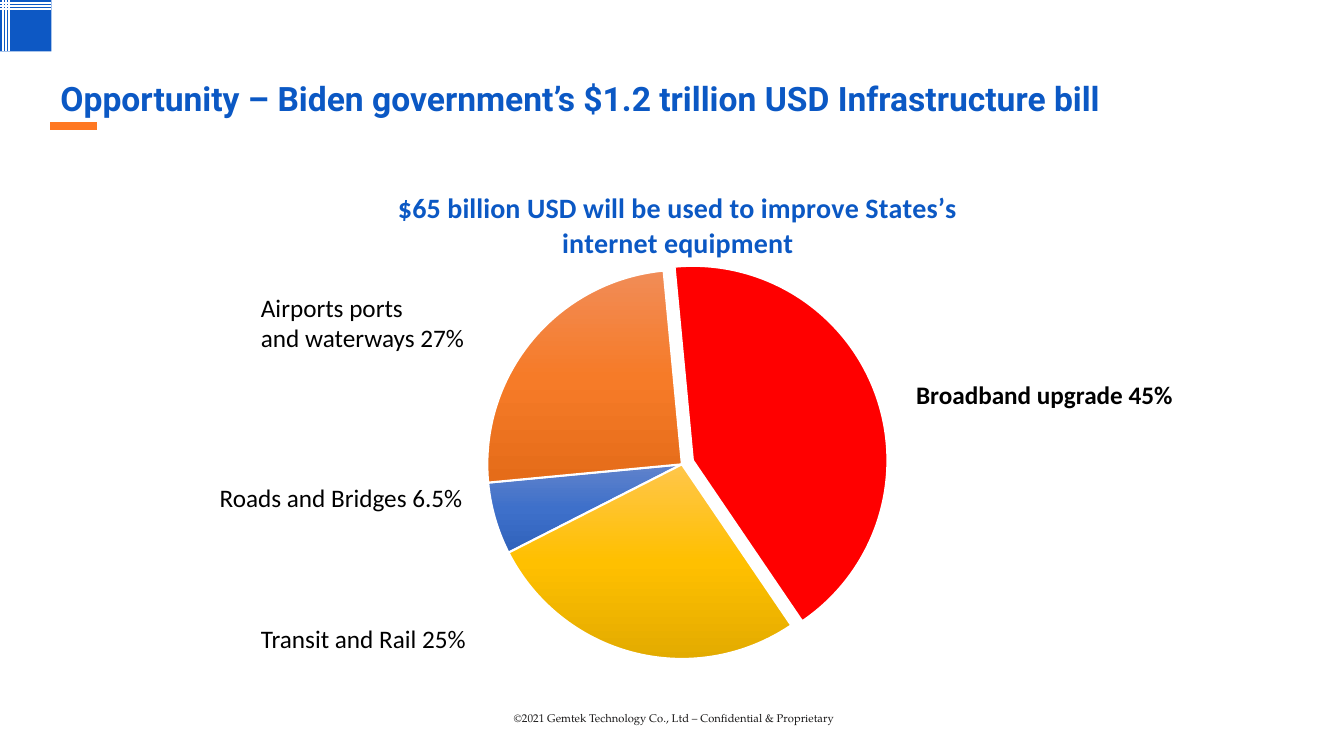
from copy import deepcopy
from dataclasses import dataclass

from lxml.etree import SubElement
from pptx import Presentation
from pptx.chart.data import CategoryChartData
from pptx.dml.color import RGBColor
from pptx.enum.chart import XL_CHART_TYPE
from pptx.enum.shapes import MSO_CONNECTOR, MSO_SHAPE
from pptx.enum.text import MSO_ANCHOR, PP_ALIGN
from pptx.oxml import parse_xml
from pptx.oxml.ns import nsdecls, qn
from pptx.util import Pt

TITLE = "Opportunity – Biden government’s $1.2 trillion USD Infrastructure bill"
HEADING = "$65 billion USD will be used to improve States’s internet equipment"
FOOTER = "©2021 Gemtek Technology Co., Ltd – Confidential & Proprietary"
# text, (left, top, width, height), bold
LABELS = [
    ("Roads and Bridges 6.5%", (149.8, 341.3, 193, 29), False),
    ("Transit and Rail 25%", (179.3, 441.4, 165.6, 29), False),
    ("Broadband upgrade 45%", (647.3, 267.1, 199.4, 29), True),
    ("Airports ports\nand waterways 27%", (179.3, 205.2, 164.2, 51), False),
]
# category, value, colours from top to bottom, explosion in percent
SLICES = [
    ("1", 6, ("6183CB", "3E70CA", "3062BB"), 0),
    ("2", 25, ("F18C57", "F67B28", "E56C19"), 0),
    ("3", 42, ("FF0000",), 6),
    ("4", 27, ("FFC64B", "FFC000", "E3AB00"), 0),
]
START = 243
CHART = (229, 115.9, 516.2, 365.8)
PLOT = {"x": 0.23, "y": 0.21, "w": 0.54, "h": 0.76}
HEAD = {"x": 0.1, "y": 0.04}
CORNER = 36.7
STRIPES = [(2.2, 1.5), (4.3, 1), (6.1, 0.5), (6.9, 0.25)]  # offset, width


@dataclass(frozen=True)
class Theme:
    blue: str = "0B58C4"
    square: str = "0D58C4"
    orange: str = "FF7822"
    white: str = "FFFFFF"
    black: str = "000000"
    ink: str = "181717"
    body: str = "Calibri"
    head: str = "Roboto"
    serif: str = "TeX Gyre Pagella"
    title: int = 24
    sub: int = 20
    label: int = 18
    base: int = 10
    small: int = 8


theme = Theme()


def rgb(code):
    return RGBColor.from_string(code)


def pts(nums):
    return [Pt(n) for n in nums]


def write(frame, text, size=theme.label, font=theme.body, color=theme.black,
          bold=False, align=PP_ALIGN.LEFT, space=None):
    for i, line in enumerate(text.split("\n")):
        para = frame.add_paragraph() if i else frame.paragraphs[0]
        para.alignment = align
        para.line_spacing = space
        run = para.add_run()
        run.text = line
        run.font.size, run.font.name = Pt(size), font
        run.font.bold, run.font.color.rgb = bold, rgb(color)


def label(slide, text, at, **style):
    frame = slide.shapes.add_textbox(*pts(at)).text_frame
    frame.word_wrap = False
    write(frame, text, **style)


def rule(slide, ends, color, width):
    line = slide.shapes.add_connector(MSO_CONNECTOR.STRAIGHT, *pts(ends))
    line.line.color.rgb, line.line.width = rgb(color), Pt(width)
    SubElement(line._element.spPr, qn("a:effectLst"))


def place(node, index, sizes, inner=False):
    """Give a chart part a manual layout, in fractions of the chart."""
    for old in node.findall(qn("c:layout")):
        node.remove(old)
    target = '<c:layoutTarget val="inner"/>' if inner else ""
    modes = "".join(f'<c:{k}Mode val="edge"/>' for k in "xy")
    nums = "".join(f'<c:{k} val="{v}"/>' for k, v in sizes.items())
    node.insert(index, parse_xml(
        f'<c:layout {nsdecls("c")}><c:manualLayout>{target}{modes}{nums}'
        "</c:manualLayout></c:layout>"))


def paint(fill, colors, node):
    if len(colors) == 1:
        fill.solid()
        fill.fore_color.rgb = rgb(colors[0])
        return
    fill.gradient()
    fill.gradient_angle = 270
    stops = node.find(f".//{qn('a:gsLst')}")
    while len(stops) < len(colors):
        stops.append(deepcopy(stops[0]))
    for i, (stop, code) in enumerate(zip(fill.gradient_stops, colors)):
        stop.color.rgb = rgb(code)
        stop.position = i / (len(colors) - 1)


def pie(slide):
    data = CategoryChartData()
    data.categories = [row[0] for row in SLICES]
    data.add_series("Series 1", [row[1] for row in SLICES])
    chart = slide.shapes.add_chart(XL_CHART_TYPE.PIE, *pts(CHART), data).chart
    chart.has_legend = False
    chart.font.size, chart.font.name = Pt(theme.base), theme.body
    chart.font.color.rgb = rgb(theme.black)
    chart.has_title = True
    write(chart.chart_title.text_frame, HEADING, size=theme.sub,
          color=theme.blue, bold=True, align=PP_ALIGN.CENTER)

    plot = chart.plots[0]
    plot.vary_by_categories = True
    root = chart._chartSpace
    for i, (_, _, colors, shift) in enumerate(SLICES):
        form = plot.series[0].points[i].format
        form.line.color.rgb, form.line.width = rgb(theme.white), Pt(1.5)
        node = root.xpath(f'.//c:dPt[c:idx/@val="{i}"]')[0]
        paint(form.fill, colors, node)
        if shift:
            node.find(qn("c:spPr")).addprevious(parse_xml(
                f'<c:explosion {nsdecls("c")} val="{shift}"/>'))

    ring = root.xpath(".//c:pieChart")[0]
    for old in ring.findall(qn("c:firstSliceAng")):
        ring.remove(old)
    SubElement(ring, qn("c:firstSliceAng")).set("val", str(START))
    place(root.xpath(".//c:plotArea")[0], 0, PLOT, inner=True)
    place(root.xpath("./c:chart/c:title")[0], 1, HEAD)


def corner(slide):
    tile = slide.shapes.add_shape(MSO_SHAPE.RECTANGLE, *pts((0, 0, CORNER, CORNER)))
    tile.shadow.inherit = False
    tile.fill.solid()
    tile.fill.fore_color.rgb = rgb(theme.square)
    tile.line.fill.background()
    for off, width in STRIPES:
        rule(slide, (off, 0, off, CORNER), theme.white, width)
        rule(slide, (CORNER, off, 0, off), theme.white, width)


def main():
    deck = Presentation()
    deck.slide_width, deck.slide_height = Pt(960), Pt(540)
    slide = deck.slides.add_slide(deck.slide_layouts[5])
    corner(slide)
    rule(slide, (36, 90, 69.1, 90), theme.orange, 6)
    label(slide, FOOTER, (357.1, 504.7, 246.2, 17.3), size=theme.small,
          font=theme.serif, color=theme.ink, align=PP_ALIGN.RIGHT)

    title = slide.shapes.title
    title.left, title.top, title.width, title.height = pts((36, 57.6, 879, 28.8))
    title.text_frame.vertical_anchor = MSO_ANCHOR.MIDDLE
    write(title.text_frame, TITLE, size=theme.title, font=theme.head,
          color=theme.blue, bold=True, space=0.9)

    pie(slide)
    for text, at, bold in LABELS:
        label(slide, text, at, bold=bold)
    deck.save("out.pptx")


if __name__ == "__main__":
    main()
